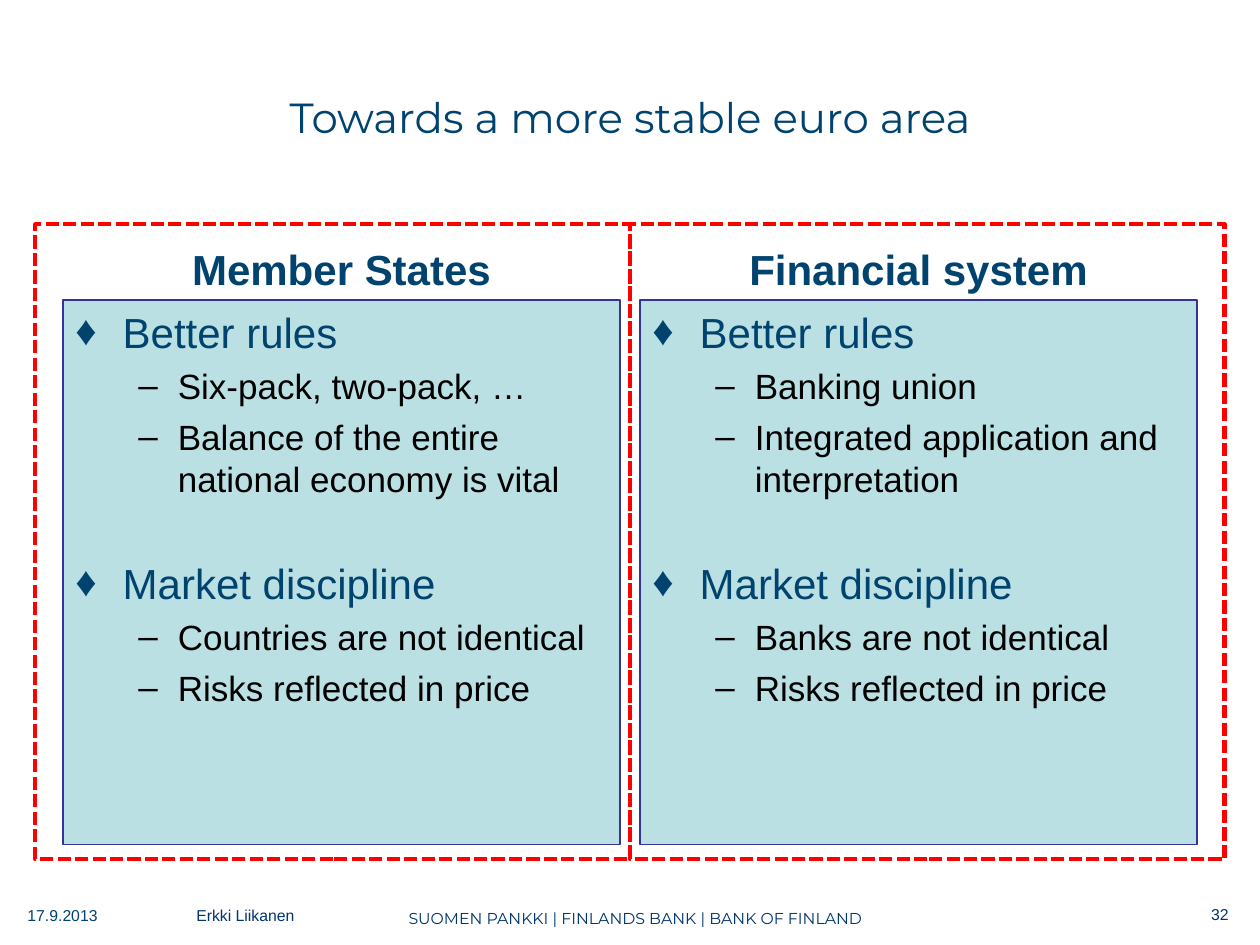
from pptx import Presentation
from pptx.dml.color import RGBColor
from pptx.enum.dml import MSO_LINE_DASH_STYLE as Dash
from pptx.enum.shapes import MSO_SHAPE as Shape
from pptx.enum.text import MSO_ANCHOR as Anchor, PP_ALIGN as Align
from pptx.oxml.ns import qn
from pptx.util import Pt
from lxml.etree import SubElement

# Content
TITLE = "Towards a more stable euro area"
COLUMNS = [
    ("Member States", [
        ("Better rules", ["Six-pack, two-pack, …",
                          "Balance of the entire national economy is vital"]),
        ("Market discipline", ["Countries are not identical",
                               "Risks reflected in price"]),
    ]),
    ("Financial system", [
        ("Better rules", ["Banking union",
                          "Integrated application and interpretation"]),
        ("Market discipline", ["Banks are not identical",
                               "Risks reflected in price"]),
    ]),
]
NAVY, DEEP_BLUE = "00436F", "00356C"
# Text, left, top, width, height, alignment, font, colour
FOOTERS = [
    ("SUOMEN PANKKI | FINLANDS BANK | BANK OF FINLAND",
     41.76, 515.5, 642.24, 20.16, Align.CENTER, "Montserrat", DEEP_BLUE),
    ("17.9.2013", 8.64, 514, 90.72, 25.92, Align.LEFT, "Arial", NAVY),
    ("Erkki Liikanen", 105.12, 514, 113, 25.92, Align.LEFT, "Arial", DEEP_BLUE),
    ("32", 632.16, 513.4, 77, 22.32, Align.RIGHT, "Arial", DEEP_BLUE),
]

# Layout in points
WIDTH, HEIGHT = 720, 540
MARGIN, PANEL_WIDTH = 36, 318.24
HEADING_TOP, HEADING_HEIGHT = 120.96, 50.4
PANEL_TOP, PANEL_HEIGHT = HEADING_TOP + HEADING_HEIGHT, 311.04
FRAME_TOP, FRAME_WIDTH, FRAME_HEIGHT = 128.16, 339.84, 362.88
GROUP_GAP = 33


def colour(value):
    return RGBColor.from_string(value)


def set_font(para, size, name, value, bold=False):
    font = para.font
    font.size, font.name, font.bold = Pt(size), name, bold
    font.color.rgb = colour(value)


def add_text(page, text, left, top, width, height, align, name, value,
             size=9, bold=False, anchor=Anchor.TOP):
    box = page.shapes.add_textbox(Pt(left), Pt(top), Pt(width), Pt(height))
    box.text_frame.word_wrap = True
    box.text_frame.vertical_anchor = anchor
    para = box.text_frame.paragraphs[0]
    para.text, para.alignment = text, align
    set_font(para, size, name, value, bold)


def add_rectangle(page, left, top, width, height, line, weight, fill=None):
    box = page.shapes.add_shape(Shape.RECTANGLE, Pt(left), Pt(top),
                                Pt(width), Pt(height))
    box.shadow.inherit = False
    if fill:
        box.fill.solid()
        box.fill.fore_color.rgb = colour(fill)
    else:
        box.fill.background()
    box.line.color.rgb = colour(line)
    box.line.width = Pt(weight)
    return box


def format_bullet(para, level, symbol, indent, hanging, size, value, before):
    para.level, para.alignment = level, Align.LEFT
    para.space_before = Pt(before)
    props = para._p.get_or_add_pPr()
    props.set("marL", str(Pt(indent)))
    props.set("indent", str(-Pt(hanging)))
    SubElement(props, qn("a:buFont")).set("typeface", "Arial")
    SubElement(props, qn("a:buChar")).set("char", symbol)
    set_font(para, size, "Arial", value)


def add_panel(page, left, groups):
    box = add_rectangle(page, left, PANEL_TOP, PANEL_WIDTH, PANEL_HEIGHT,
                        "333399", 0.75, "BBE0E3")
    frame = box.text_frame
    frame.word_wrap, frame.vertical_anchor = True, Anchor.TOP
    for number, (topic, points) in enumerate(groups):
        para = frame.add_paragraph() if number else frame.paragraphs[0]
        para.text = topic
        format_bullet(para, 0, "♦", 27, 27, 24, NAVY,
                      GROUP_GAP if number else 0)
        for point in points:
            para = frame.add_paragraph()
            para.text = point
            format_bullet(para, 1, "–", 58.5, 22.5, 20, "000000", 4.8)


deck = Presentation()
deck.slide_width, deck.slide_height = Pt(WIDTH), Pt(HEIGHT)
page = deck.slides.add_slide(deck.slide_layouts[5])

# Title
title = page.shapes.title
title.left, title.top = Pt(MARGIN), Pt(21.6)
title.width, title.height = Pt(WIDTH - 2 * MARGIN), Pt(90)
title.text_frame.text = TITLE
title.text_frame.vertical_anchor = Anchor.MIDDLE
title_para = title.text_frame.paragraphs[0]
title_para.alignment = Align.CENTER
set_font(title_para, 24, "Montserrat", NAVY)

# Columns, mirrored about the slide centre
for (heading, groups), left in zip(COLUMNS,
                                   (MARGIN, WIDTH - MARGIN - PANEL_WIDTH)):
    add_text(page, heading, left, HEADING_TOP, PANEL_WIDTH, HEADING_HEIGHT,
             Align.CENTER, "Arial", NAVY, 24, True, Anchor.BOTTOM)
    add_panel(page, left, groups)

# Footer
for footer in FOOTERS:
    add_text(page, *footer)

# Dashed frames meeting at the slide centre
for left in (WIDTH / 2 - FRAME_WIDTH, WIDTH / 2):
    dashed = add_rectangle(page, left, FRAME_TOP, FRAME_WIDTH, FRAME_HEIGHT,
                           "FF0000", 2.5)
    dashed.line.dash_style = Dash.SQUARE_DOT

deck.save("out.pptx")
